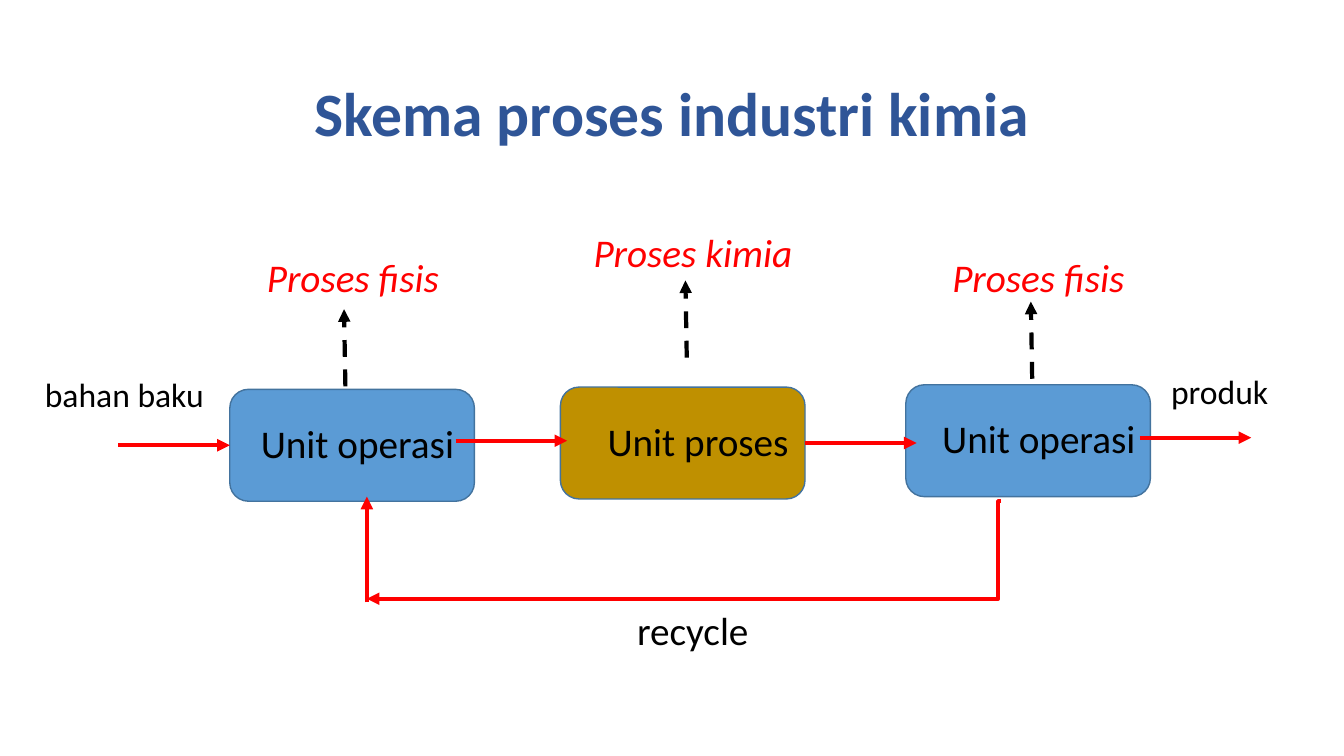
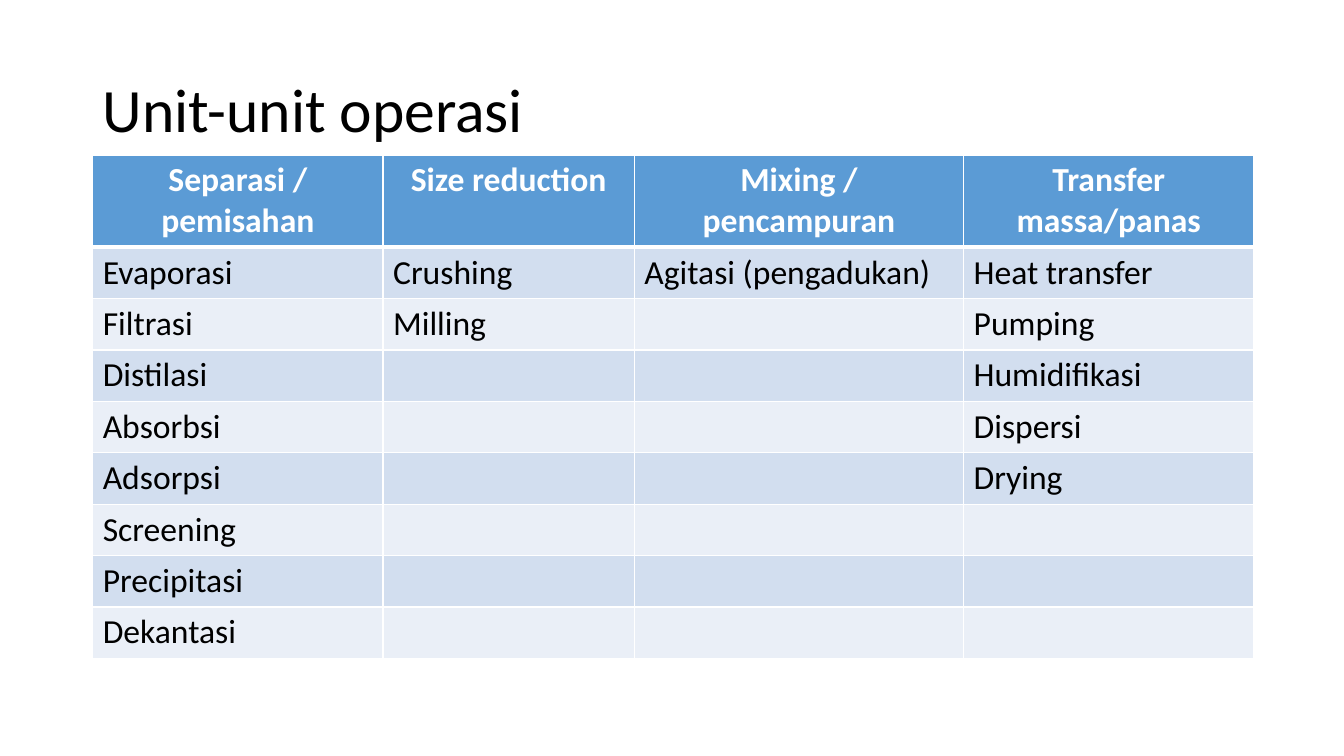
import itertools

import lxml.etree
import pptx
import pptx.dml.color
import pptx.enum.dml
import pptx.enum.shapes
import pptx.enum.text
import pptx.oxml.ns
import pptx.util

COLORS = {
    "black": "000000", "white": "FFFFFF", "red": "FF0000", "navy": "2F5597",
    "blue": "5B9BD5", "gold": "BF9000", "edge": "43739E",
    "band": "D2DEEF", "pale": "EAEFF7",
}
FONT = "Calibri"
LEFT, CENTER = pptx.enum.text.PP_ALIGN.LEFT, pptx.enum.text.PP_ALIGN.CENTER
MIDDLE = pptx.enum.text.MSO_ANCHOR.MIDDLE
STRAIGHT = pptx.enum.shapes.MSO_CONNECTOR.STRAIGHT
ELBOW = pptx.enum.shapes.MSO_CONNECTOR.ELBOW
TITLE_ONLY = 5


def rgb(name):
    return pptx.dml.color.RGBColor.from_string(COLORS[name])


def add_xml(parent, tag, **attrs):
    return lxml.etree.SubElement(parent, pptx.oxml.ns.qn(tag), **attrs)


class Deck:
    """Slides on a grid of 100 columns by 100 rows."""

    def __init__(self):
        self.prs = pptx.Presentation()
        self.prs.slide_width = pptx.util.Inches(13.33)
        self.prs.slide_height = pptx.util.Inches(7.5)
        self.s = None

    def x(self, columns):
        return round(self.prs.slide_width * columns / 100)

    def y(self, rows):
        return round(self.prs.slide_height * rows / 100)

    def area(self, x, y, w, h):
        return self.x(x), self.y(y), self.x(w), self.y(h)

    def add_text(self, tf, text, size, color="black", align=LEFT, bold=False, italic=False):
        tf.word_wrap = True
        p = tf.paragraphs[0]
        p.alignment = align
        r = p.add_run()
        r.text = text
        r.font.name, r.font.size = FONT, pptx.util.Pt(size)
        r.font.bold, r.font.italic = bold, italic
        r.font.color.rgb = rgb(color)
        return p

    def slide(self, title, top, **style):
        self.s = self.prs.slides.add_slide(self.prs.slide_layouts[TITLE_ONLY])
        sp = self.s.shapes.title
        sp.left, sp.top, sp.width, sp.height = self.area(6.9, top, 86.25, 19.3)
        sp.text_frame.vertical_anchor = MIDDLE
        self.add_text(sp.text_frame, title, 44, **style).line_spacing = 0.9

    def unit(self, x, y, text, fill, indent):
        """Rounded process box whose text starts `indent` columns in."""
        shape = pptx.enum.shapes.MSO_SHAPE.ROUNDED_RECTANGLE
        sp = self.s.shapes.add_shape(shape, *self.area(x, y, 18.2, 14.8))
        sp.shadow.inherit = False
        sp.fill.solid()
        sp.fill.fore_color.rgb = rgb(fill)
        sp.line.color.rgb = rgb("edge")
        sp.line.width = pptx.util.Pt(1)
        tf = sp.text_frame
        tf.vertical_anchor = MIDDLE
        tf.margin_left, tf.margin_right = self.x(indent), 0
        tf.margin_bottom = self.y(1.3)
        self.add_text(tf, text, 28)
        return sp

    def label(self, x, y, text, size=28, **style):
        sp = self.s.shapes.add_textbox(*self.area(x, y, 17.5, 7.6))
        self.add_text(sp.text_frame, text, size, align=CENTER, **style)

    def arrow(self, start, end, color="red", dashed=False, kind=STRAIGHT):
        c = self.s.shapes.add_connector(
            kind, self.x(start[0]), self.y(start[1]), self.x(end[0]), self.y(end[1]))
        c.line.color.rgb = rgb(color)
        c.line.width = pptx.util.Pt(3)
        if dashed:
            c.line.dash_style = pptx.enum.dml.MSO_LINE.DASH
        spPr = c.element.spPr
        add_xml(spPr.get_or_add_ln(), "a:tailEnd", type="triangle")
        add_xml(spPr, "a:effectLst")
        return c

    def bent_arrow(self, start, end, bend):
        """Elbow arrow that turns at `bend` thousandths of its width."""
        c = self.arrow(start, end, kind=ELBOW)
        geom = c.element.spPr.find(pptx.oxml.ns.qn("a:prstGeom"))
        guides = geom.find(pptx.oxml.ns.qn("a:avLst"))
        add_xml(guides, "a:gd", name="adj1", fmla=f"val {bend * 100}")

    def border(self, cell, header):
        tcPr = cell._tc.get_or_add_tcPr()
        for side in "LRTB":
            points = 3 if header and side == "B" else 1
            ln = add_xml(tcPr, f"a:ln{side}", w=str(pptx.util.Pt(points)))
            add_xml(add_xml(ln, "a:solidFill"), "a:srgbClr", val=COLORS["white"])

    def table(self, x, y, widths, heading_height, row_height, headings, columns):
        rows = [headings, *itertools.zip_longest(*columns, fillvalue="")]
        heights = [heading_height] + [row_height] * (len(rows) - 1)
        table = self.s.shapes.add_table(
            len(rows), len(widths), *self.area(x, y, sum(widths), sum(heights))).table
        for column, width in zip(table.columns, widths):
            column.width = self.x(width)
        for i, (row, height) in enumerate(zip(rows, heights)):
            header = i == 0
            table.rows[i].height = self.y(height)
            fill = "blue" if header else "band" if i % 2 else "pale"
            for cell, text in zip(table.rows[i].cells, row):
                self.border(cell, header)
                cell.fill.solid()
                cell.fill.fore_color.rgb = rgb(fill)
                if text:
                    self.add_text(cell.text_frame, text, 24, "white" if header else "black",
                                  CENTER if header else LEFT, bold=header)


def process_slide(deck):
    deck.slide("Skema proses industri kimia", 5.7, color="navy", align=CENTER, bold=True)
    feed_unit = deck.unit(17.1, 51.5, "Unit operasi", "blue", 1.9)
    reactor = deck.unit(41.7, 51.2, "Unit proses", "gold", 3.1)
    deck.unit(67.4, 50.9, "Unit operasi", "blue", 2.3)

    flow = 8.3
    feed, _, transfer, _ = [
        deck.arrow((x, y), (x + flow, y))
        for x, y in [(8.8, 58.9), (33.9, 58.3), (59.9, 58.6), (84.8, 57.9)]]
    feed.end_connect(feed_unit, 1)
    transfer.begin_connect(reactor, 3)

    deck.bent_arrow((74.5, 66.3), (27.3, 79.2), bend=5)
    deck.arrow((27.3, 79.7), (27.3, 65.7))

    for x, y in [(25.7, 51.1), (51.1, 47.3), (76.8, 50.1)]:
        deck.arrow((x, y), (x - 0.1, y - 10.2), "black", dashed=True)
    for x, y, kind in [(17.5, 32.8, "fisis"), (42.8, 29.6, "kimia"), (68.5, 32.8, "fisis")]:
        deck.label(x, y, f"Proses {kind}", color="red", italic=True)
    deck.label(42.8, 79.5, "recycle")
    deck.label(82, 48.4, "produk", 24)
    deck.label(0.5, 48.8, "bahan baku", 24)


def operations_slide(deck):
    deck.slide("Unit-unit operasi", 5.3)
    deck.table(
        6.9, 20.5, [21.6, 18.7, 24.5, 21.6], 12.2, 6.8,
        ["Separasi / pemisahan", "Size reduction", "Mixing / pencampuran",
         "Transfer massa/panas"],
        [["Evaporasi", "Filtrasi", "Distilasi", "Absorbsi", "Adsorpsi", "Screening",
          "Precipitasi", "Dekantasi"],
         ["Crushing", "Milling"],
         ["Agitasi (pengadukan)"],
         ["Heat transfer", "Pumping", "Humidifikasi", "Dispersi", "Drying"]])


def main():
    deck = Deck()
    process_slide(deck)
    operations_slide(deck)
    deck.prs.save("out.pptx")


if __name__ == "__main__":
    main()
